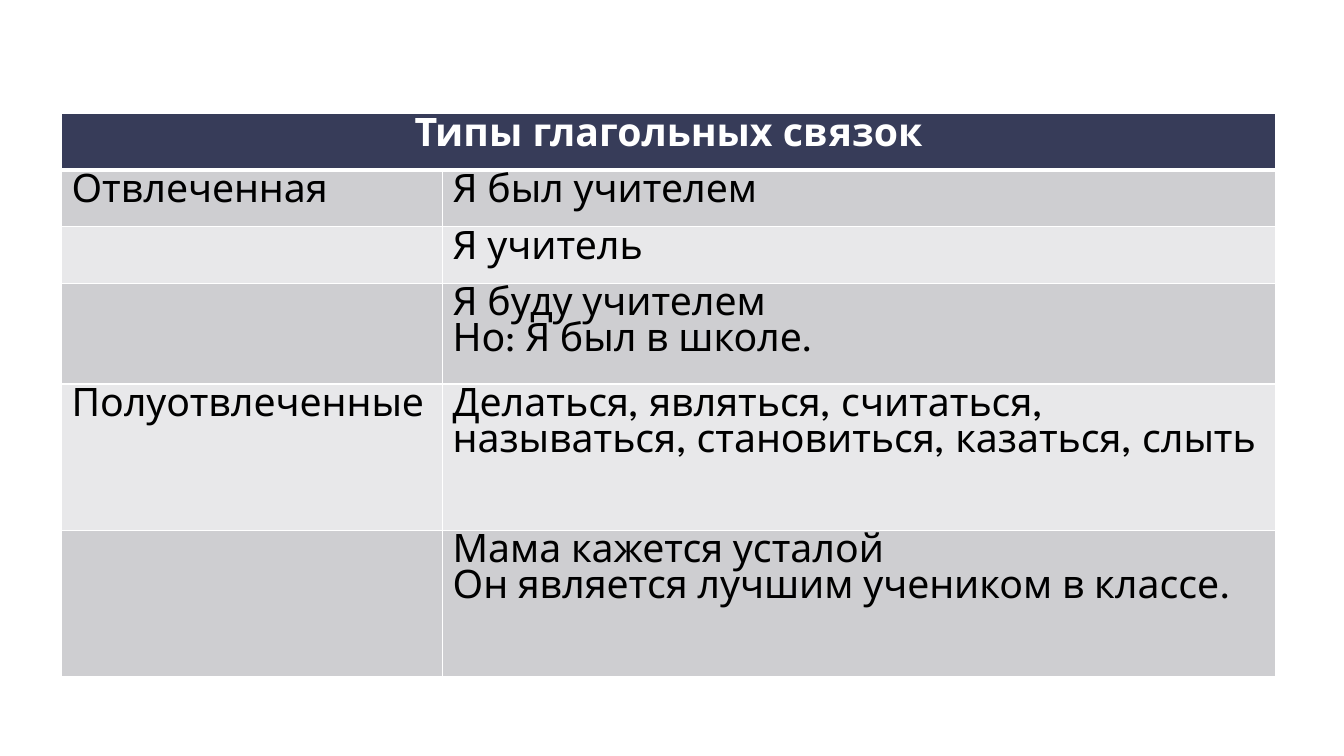
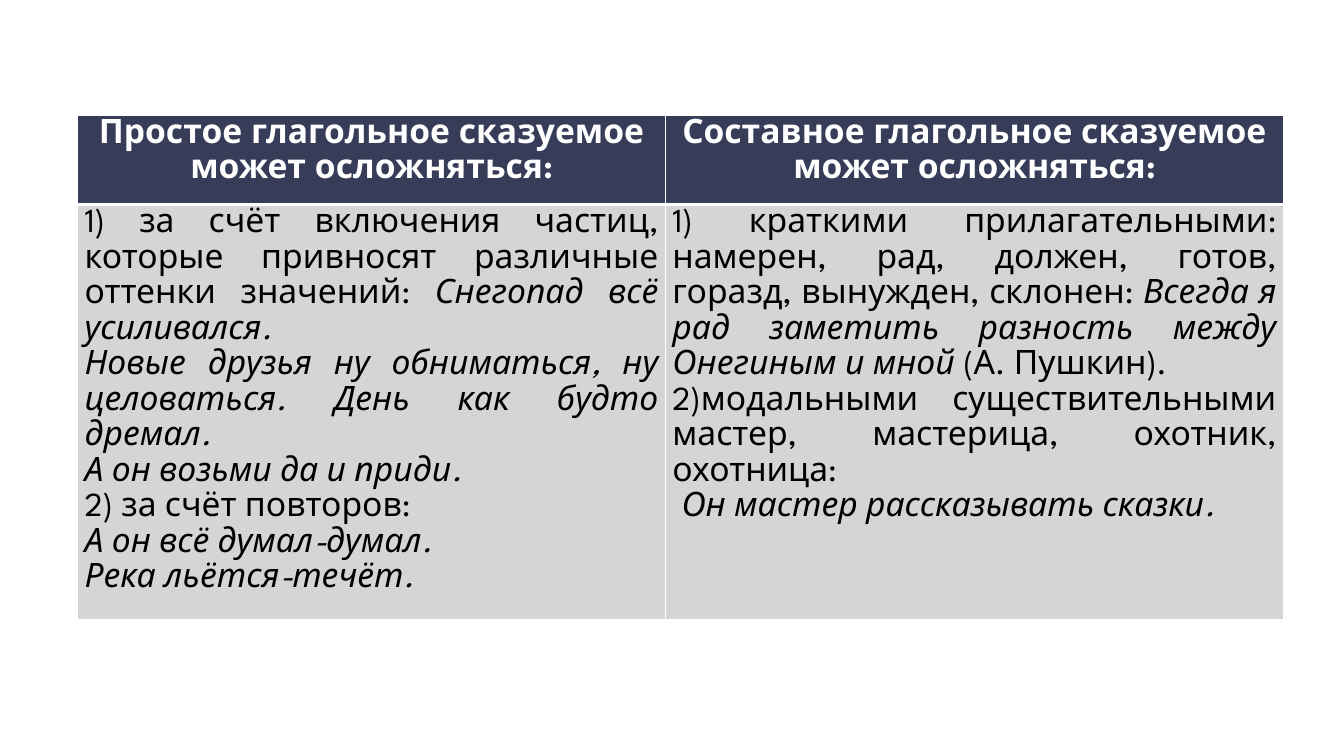
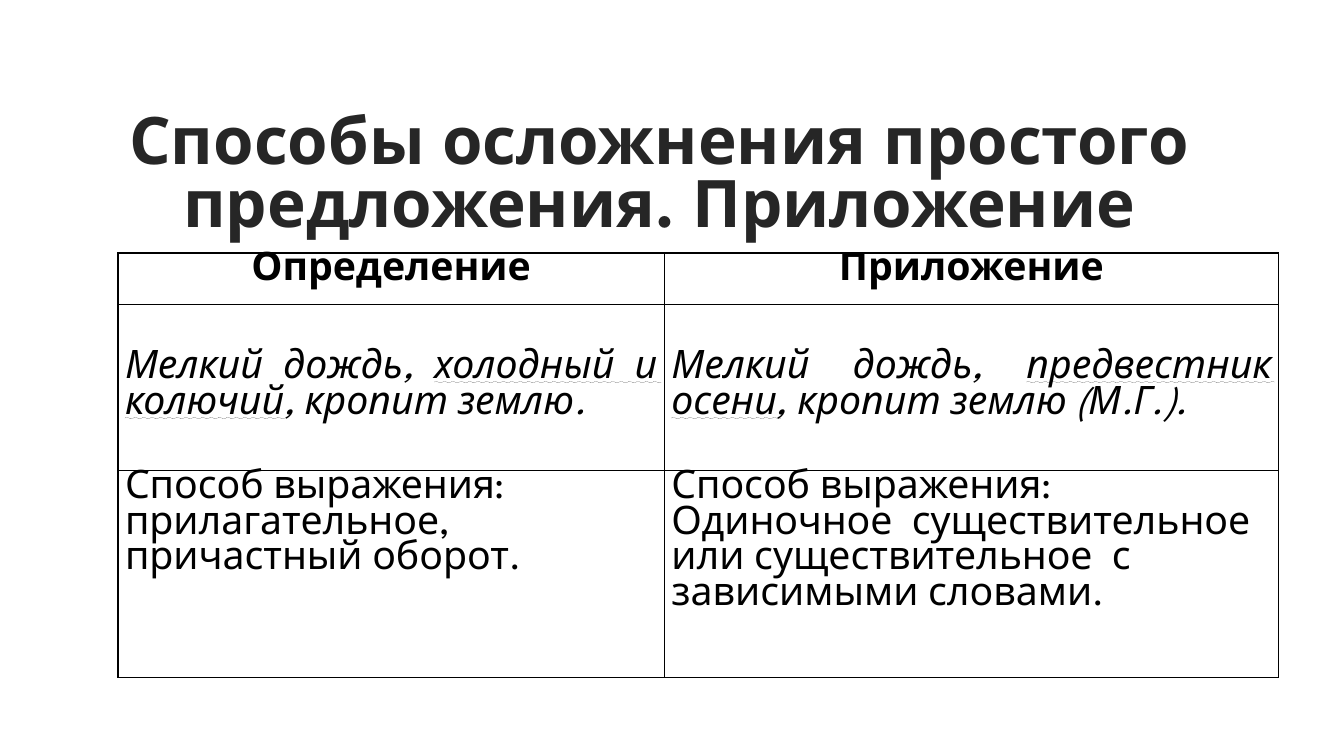
from dataclasses import dataclass
from lxml.etree import SubElement
from pptx import Presentation
from pptx.dml.color import RGBColor
from pptx.enum.text import MSO_ANCHOR as Anchor, MSO_UNDERLINE as Underline, PP_ALIGN as Align
from pptx.oxml.ns import qn
from pptx.util import Inches, Pt

COLORS = {
    "header": "373C59",
    "dark_band": "CECED1",
    "light_band": "E8E8EA",
    "panel": "D4D5D6",
    "white": "FFFFFF",
    "black": "000000",
    "title": "262626",
}
FONT = "League Spartan"
BOLD = {"bold": True}
ITALIC = {"italic": True}
WAVY = {"italic": True, "underline": Underline.WAVY_LINE}
NARROW = {"margin_left": Inches(0.07), "margin_right": Inches(0.07),
          "margin_top": 0, "margin_bottom": 0}
SIDES = ("lnL", "lnR", "lnT", "lnB")


@dataclass
class Line:
    runs: list
    align: Align = Align.LEFT
    indent: float = 0


def line(text, style=None, align=Align.LEFT, indent=0):
    return Line([(text, style or {})], align, indent)


def justified(*runs):
    return Line(list(runs), Align.JUSTIFY)


def heading(text):
    return line(text, BOLD, Align.CENTER)


def apply(target, values):
    for name, value in values.items():
        setattr(target, name, value)


def rgb(name):
    return RGBColor.from_string(COLORS[name])


def write_lines(frame, lines, size, color, spacing=None):
    for index, entry in enumerate(lines):
        paragraph = frame.add_paragraph() if index else frame.paragraphs[0]
        apply(paragraph, {"alignment": entry.align, "line_spacing": spacing})
        if entry.indent:
            paragraph._p.get_or_add_pPr().set("marL", str(Inches(entry.indent)))
        for text, style in entry.runs:
            run = paragraph.add_run()
            run.text = text
            apply(run.font, {"name": FONT, "size": Pt(size), "bold": False} | style)
            run.font.color.rgb = rgb(color)


def draw_borders(cell, color, widths):
    properties = cell._tc.get_or_add_tcPr()
    for side in SIDES:
        border = SubElement(properties, qn(f"a:{side}"), w=str(Pt(widths.get(side, 1))))
        fill = SubElement(border, qn("a:solidFill"))
        SubElement(fill, qn("a:srgbClr"), val=COLORS[color])


def add_grid(slide, left, top, columns, heights, rows, size, fills=None,
             border="white", spacing=None, margins=None, middle_rows=()):
    table = slide.shapes.add_table(
        len(heights), len(columns), Inches(left), Inches(top),
        Inches(sum(columns)), Inches(sum(heights))).table
    for column, width in zip(table.columns, columns):
        column.width = Inches(width)
    for row, height in zip(table.rows, heights):
        row.height = Inches(height)
    for row_index, contents in enumerate(rows):
        header_edge = {0: {"lnB": 3}, 1: {"lnT": 3}}.get(row_index, {}) if fills else {}
        text_color = "white" if fills and row_index == 0 else "black"
        for column_index, lines in enumerate(contents):
            cell = table.cell(row_index, column_index)
            draw_borders(cell, border, header_edge)
            if fills:
                cell.fill.solid()
                cell.fill.fore_color.rgb = rgb(fills[row_index])
            else:
                cell.fill.background()
            anchor = Anchor.MIDDLE if row_index in middle_rows else Anchor.TOP
            apply(cell, {"vertical_anchor": anchor} | (margins or {}))
            write_lines(cell.text_frame, lines, size, text_color, spacing)
    return table


def add_title(slide, text):
    frame = slide.shapes.add_textbox(
        Inches(1.04), Inches(1.01), Inches(11), Inches(1.5)).text_frame
    apply(frame, {"word_wrap": True, "vertical_anchor": Anchor.MIDDLE})
    write_lines(frame, [heading(text)], 46.8, "title", 0.8)


def build_link_verbs(slide):
    rows = [
        [[heading("Типы глагольных связок")], []],
        [[line("Отвлеченная")], [line("Я был учителем")]],
        [[], [line("Я учитель")]],
        [[], [line("Я буду учителем"), justified(("Но: Я был в школе.", {}))]],
        [[line("Полуотвлеченные")],
         [line("Делаться, являться, считаться, называться, становиться, казаться, слыть")]],
        [[], [line("Мама кажется усталой"),
              line("Он является лучшим учеником в классе.")]],
    ]
    bands = [("light_band", "dark_band")[index % 2] for index in range(1, len(rows))]
    table = add_grid(slide, 0.61, 1.13, [3.78, 8.26], [0.56, 0.56, 0.56, 1, 1.45, 1.45],
                     rows, 28, ["header"] + bands)
    table.cell(0, 0).merge(table.cell(0, 1))


def build_predicates(slide):
    simple = [
        justified(("1) за счёт включения частиц, которые привносят различные оттенки значений: ", {}),
                  ("Снегопад всё усиливался.", ITALIC)),
        justified(("Новые друзья ну обниматься, ну целоваться. День как будто дремал.", ITALIC)),
        justified(("А он возьми да и приди.", ITALIC)),
        justified(("2) за счёт повторов:", {})),
        justified(("А он всё думал-думал.", ITALIC)),
        justified(("Река льётся-течёт.", ITALIC)),
    ]
    compound = [
        justified(("1) краткими прилагательными: намерен, рад, должен, готов, горазд, "
                   "вынужден, склонен: ", {}),
                  ("Всегда я рад заметить разность между Онегиным и мной ", ITALIC),
                  ("(А. Пушкин).", {})),
        justified(("2)модальными существительными мастер, мастерица, охотник, охотница:", {})),
        line("Он мастер рассказывать сказки.", ITALIC, Align.JUSTIFY, 0.09),
    ]
    headings = [[heading(f"{kind} глагольное сказуемое может осложняться:")]
                for kind in ("Простое", "Составное")]
    add_grid(slide, 0.77, 1.14, [5.83, 6.13], [0.89, 4.12], [headings, [simple, compound]],
             24, ["header", "panel"], spacing=1.15, margins=NARROW)


def build_apposition(slide):
    add_title(slide, "Способы осложнения простого предложения. Приложение")
    examples = [
        [justified(("Мелкий дождь, ", ITALIC), (phrase, WAVY), (ending, ITALIC))]
        for phrase, ending in (("холодный и колючий", ", кропит землю."),
                               ("предвестник осени", ", кропит землю (М.Г.)."))
    ]
    rows = [
        [[heading("Определение")], [heading("Приложение")]],
        examples,
        [[justified(("Способ выражения:", {})),
          justified(("прилагательное, причастный оборот.", {}))],
         [line("Способ выражения:"),
          line("Одиночное  существительное"),
          line("или существительное  с зависимыми словами.")]],
    ]
    add_grid(slide, 1.17, 2.51, [5.42, 6.09], [0.51, 1.65, 2.05], rows, 28,
             border="black", margins=NARROW, middle_rows=(1,))


def main():
    deck = Presentation()
    apply(deck, {"slide_width": Inches(13.33), "slide_height": Inches(7.5)})
    for build in (build_link_verbs, build_predicates, build_apposition):
        build(deck.slides.add_slide(deck.slide_layouts[6]))
    deck.save("out.pptx")


if __name__ == "__main__":
    main()
